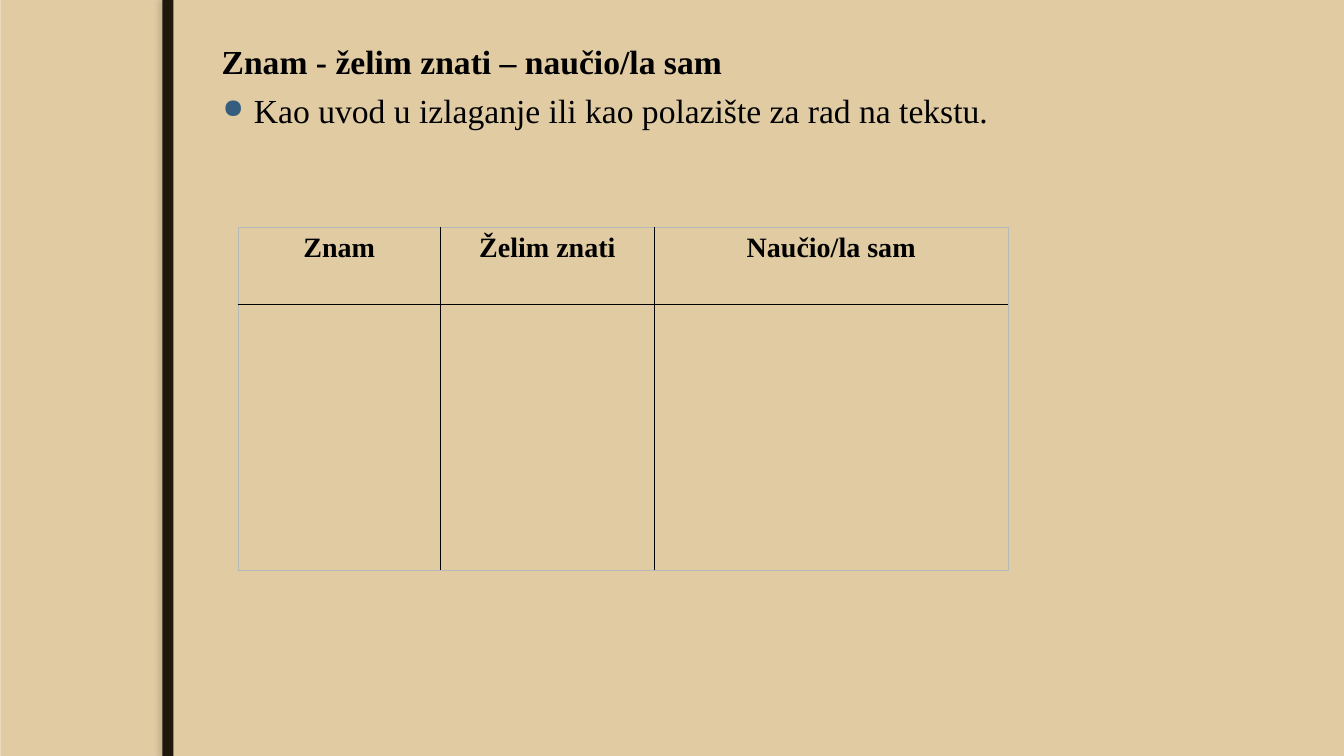
from dataclasses import dataclass

from lxml.etree import SubElement
from pptx import Presentation
from pptx.dml.color import RGBColor
from pptx.enum.shapes import MSO_SHAPE as Shape
from pptx.enum.text import PP_ALIGN as Align
from pptx.oxml.ns import qn
from pptx.util import Inches, Pt

FONT = "Times New Roman"
COLORS = {
    "background": "EBDDC3",
    "panel": "E0CBA3",
    "bar": "20190B",
    "shadow": "766E60",
    "text": "000000",
    "bullet": "355D7E",
    "grid": "000000",
    "frame": "B5BAB8",
}


@dataclass
class Band:
    left: float
    width: float
    color: str
    shadow: bool = False


@dataclass
class Line:
    text: str
    bold: bool
    margin: float
    bullet: bool = False


BANDS = [
    Band(0.01, 13.32, "panel"),
    Band(1.61, 0.11, "bar", shadow=True),
]
LINES = [
    Line("Znam - želim znati – naučio/la sam", True, 0.08),
    Line("Kao uvod u izlaganje ili kao polazište za rad na tekstu.", False, 0.4, bullet=True),
]
HEADERS = ["Znam", "Želim znati", "Naučio/la sam"]
COL_WIDTHS = [2.01, 2.12, 3.51]
ROW_HEIGHTS = [0.76, 2.64]


def rgb(name: str) -> RGBColor:
    return RGBColor.from_string(COLORS[name])


def add_run(p, text: str, size: float, bold: bool) -> None:
    r = p.add_run()
    r.text = text
    r.font.name = FONT
    r.font.size = Pt(size)
    r.font.bold = bold
    r.font.color.rgb = rgb("text")


def add_band(slide, band: Band) -> None:
    s = slide.shapes.add_shape(
        Shape.RECTANGLE, Inches(band.left), 0, Inches(band.width), Inches(7.5))
    s.fill.solid()
    s.fill.fore_color.rgb = rgb(band.color)
    s.line.fill.background()
    s.shadow.inherit = False
    if band.shadow:
        effects = s._element.spPr.find(qn("a:effectLst"))
        shadow = SubElement(effects, qn("a:outerShdw"), blurRad=str(Pt(3)),
                            dist=str(Pt(3)), dir="10800000", rotWithShape="0")
        color = SubElement(shadow, qn("a:srgbClr"), val=COLORS["shadow"])
        SubElement(color, qn("a:alpha"), val="25000")


def add_line(p, line: Line) -> None:
    pPr = p._p.get_or_add_pPr()
    pPr.set("marL", str(Inches(line.margin)))
    if line.bullet:
        pPr.set("indent", str(Inches(-0.31)))
        color = SubElement(pPr, qn("a:buClr"))
        SubElement(color, qn("a:srgbClr"), val=COLORS["bullet"])
        SubElement(pPr, qn("a:buSzPct"), val="80000")
        SubElement(pPr, qn("a:buChar"), char="●")
        p.space_before = Pt(6)
    add_run(p, line.text, 24, line.bold)


def set_border(cell, side: str, color: str, width: float) -> None:
    ln = SubElement(cell._tc.get_or_add_tcPr(), qn(f"a:ln{side}"), w=str(Pt(width)))
    fill = SubElement(ln, qn("a:solidFill"))
    SubElement(fill, qn("a:srgbClr"), val=COLORS[color])


def add_chart_table(slide) -> None:
    rows, cols = len(ROW_HEIGHTS), len(COL_WIDTHS)
    table = slide.shapes.add_table(
        rows, cols, Inches(2.36), Inches(2.26),
        Inches(sum(COL_WIDTHS)), Inches(sum(ROW_HEIGHTS))).table
    table.first_row = table.horz_banding = False
    for column, width in zip(table.columns, COL_WIDTHS):
        column.width = Inches(width)
    for row, height in zip(table.rows, ROW_HEIGHTS):
        row.height = Inches(height)

    # Dark inner rules, pale outer frame
    for i in range(rows):
        for j in range(cols):
            cell = table.cell(i, j)
            outer = {"L": j == 0, "R": j == cols - 1, "T": i == 0, "B": i == rows - 1}
            for side, is_outer in outer.items():
                set_border(cell, side, *(("frame", 0.5) if is_outer else ("grid", 1)))
            cell.fill.background()

    for j, header in enumerate(HEADERS):
        p = table.cell(0, j).text_frame.paragraphs[0]
        p.alignment = Align.CENTER
        add_run(p, header, 20, True)


def main() -> None:
    prs = Presentation()
    prs.slide_width, prs.slide_height = Inches(13.33), Inches(7.5)
    slide = prs.slides.add_slide(prs.slide_layouts[6])

    # Background, panel and side bar
    slide.background.fill.solid()
    slide.background.fill.fore_color.rgb = rgb("background")
    for band in BANDS:
        add_band(slide, band)

    # Heading and bullet
    tf = slide.shapes.add_textbox(
        Inches(2.02), Inches(0.36), Inches(10.32), Inches(6.39)).text_frame
    tf.word_wrap = True
    for i, line in enumerate(LINES):
        add_line(tf.add_paragraph() if i else tf.paragraphs[0], line)

    # Three-column table
    add_chart_table(slide)
    prs.save("out.pptx")


if __name__ == "__main__":
    main()
